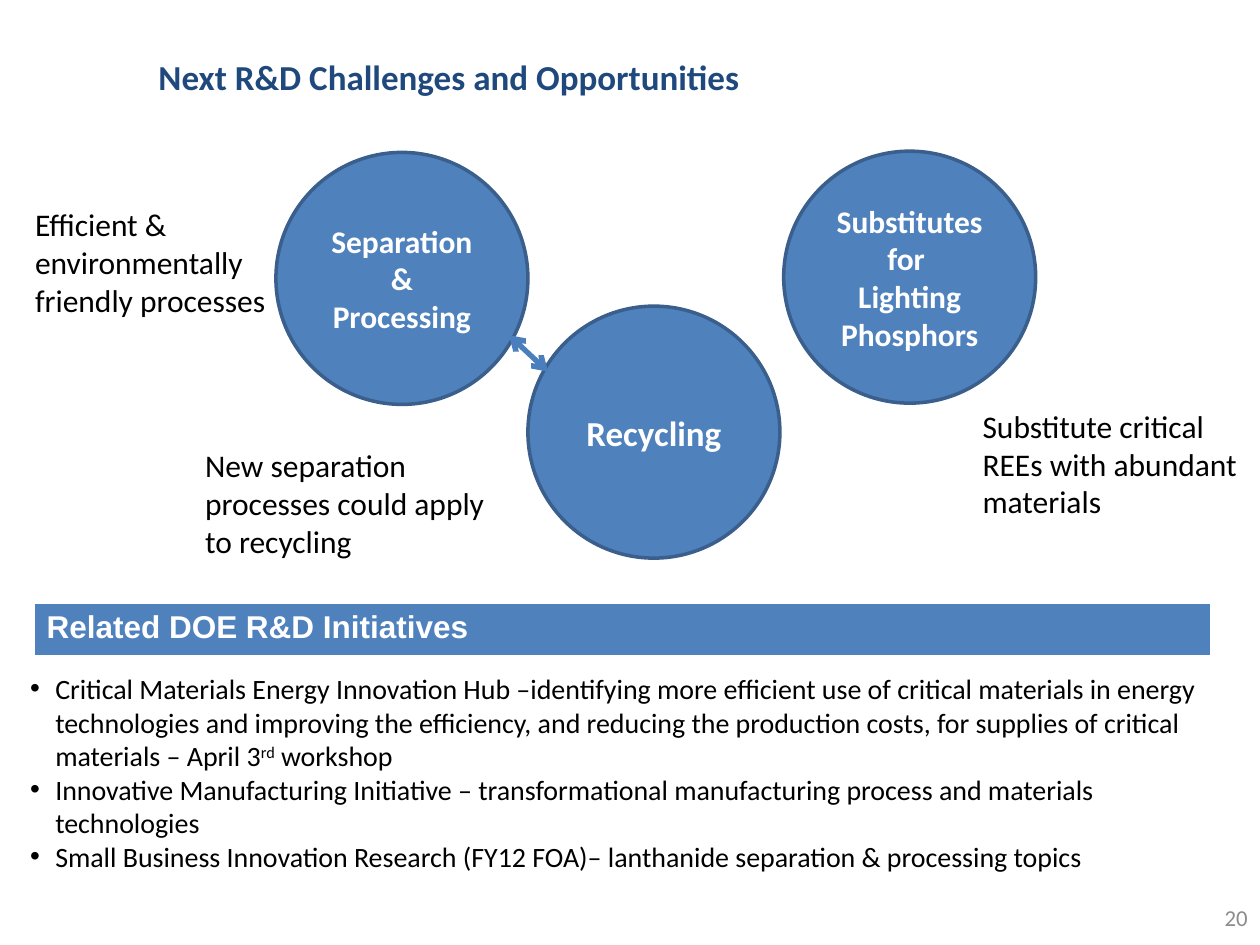
from lxml.etree import SubElement
from pptx import Presentation
from pptx.dml.color import RGBColor
from pptx.enum.shapes import MSO_CONNECTOR as Connector, MSO_SHAPE as Shape
from pptx.enum.text import MSO_ANCHOR as Anchor, PP_ALIGN as Align
from pptx.oxml.ns import qn
from pptx.util import Inches, Pt

COLORS = {
    "title": "1F497D",
    "circle": "4F81BD",
    "outline": "3A5F8C",
    "arrow": "4B7EBC",
    "text": "000000",
    "white": "FFFFFF",
    "number": "8C8C8C",
}
DIAMETER = 2
NOTE_HEIGHT = 1.01


def color(name):
    return RGBColor.from_string(COLORS[name])


def style(paragraph, size, ink, bold=False, align=Align.LEFT, face="Calibri"):
    paragraph.alignment = align
    font = paragraph.font
    font.name, font.size, font.bold = face, Pt(size), bold
    font.color.rgb = color(ink)


def add_text_frame(slide, box, anchor=Anchor.TOP):
    frame = slide.shapes.add_textbox(*map(Inches, box)).text_frame
    frame.word_wrap = True
    frame.vertical_anchor = anchor
    return frame


def add_label(slide, box, text, size, ink, anchor=Anchor.TOP, **options):
    paragraph = add_text_frame(slide, box, anchor).paragraphs[0]
    paragraph.text = text
    style(paragraph, size, ink, **options)


def add_topic(slide, left, top, lines, size):
    topic = slide.shapes.add_shape(
        Shape.OVAL, *map(Inches, (left, top, DIAMETER, DIAMETER)))
    topic.shadow.inherit = False
    topic.fill.solid()
    topic.fill.fore_color.rgb = color("circle")
    topic.line.color.rgb = color("outline")
    topic.line.width = Pt(2)
    frame = topic.text_frame
    frame.word_wrap = True
    frame.vertical_anchor = Anchor.MIDDLE
    frame.text = "\n".join(lines)
    for paragraph in frame.paragraphs:
        style(paragraph, size, "white", bold=True, align=Align.CENTER)


def add_double_arrow(slide, start, end):
    arrow = slide.shapes.add_connector(
        Connector.STRAIGHT, *map(Inches, (*start, *end)))
    arrow.line.color.rgb = color("arrow")
    arrow.line.width = Pt(3)
    line = arrow.line._get_or_add_ln()
    for tag in ("a:headEnd", "a:tailEnd"):
        SubElement(line, qn(tag), type="arrow")
    SubElement(arrow._element.spPr, qn("a:effectLst"))


def add_challenges(slide, left, top):
    add_topic(slide, left + 2.01, top + 0.01, ["Separation & Processing"], 18)
    add_topic(slide, left + 6.04, top, ["Substitutes for ", "Lighting Phosphors"], 18)
    add_topic(slide, left + 4.01, top + 1.23, ["Recycling"], 20)
    add_double_arrow(slide, (left + 3.86, top + 1.46), (left + 4.17, top + 1.75))
    notes = [
        (0, 0.38, 2.13, "Efficient & environmentally friendly processes"),
        (1.35, 2.29, 2.56, "New separation processes could apply to recycling"),
        (7.52, 1.98, 2.3, "Substitute critical REEs with abundant materials"),
    ]
    for dx, dy, width, text in notes:
        add_label(slide, (left + dx, top + dy, width, NOTE_HEIGHT), text, 18, "text")


def add_banner(slide, box, text):
    table = slide.shapes.add_table(1, 1, *map(Inches, box)).table
    cell = table.cell(0, 0)
    properties = cell._tc.get_or_add_tcPr()
    for side, width in (("L", 1), ("R", 1), ("T", 1), ("B", 3)):
        border = SubElement(properties, qn(f"a:ln{side}"), w=str(Pt(width)))
        fill = SubElement(border, qn("a:solidFill"))
        SubElement(fill, qn("a:srgbClr"), val=COLORS["white"])
    cell.fill.solid()
    cell.fill.fore_color.rgb = color("circle")
    cell.text = text
    style(cell.text_frame.paragraphs[0], 18, "white", bold=True, face="Arial")


def add_initiatives(slide, box, initiatives):
    frame = add_text_frame(slide, box)
    for index, parts in enumerate(initiatives):
        paragraph = frame.add_paragraph() if index else frame.paragraphs[0]
        properties = paragraph._p.get_or_add_pPr()
        properties.set("marL", str(Inches(0.2)))
        properties.set("indent", str(Inches(-0.2)))
        SubElement(properties, qn("a:buFont"), typeface="Arial")
        SubElement(properties, qn("a:buChar"), char="•")
        style(paragraph, 16, "text")
        for text, raised in parts:
            run = paragraph.add_run()
            run.text = text
            if raised:
                run._r.get_or_add_rPr().set("baseline", "30000")


def main():
    deck = Presentation()
    deck.slide_width, deck.slide_height = Inches(10), Inches(7.5)
    slide = deck.slides.add_slide(deck.slide_layouts[6])

    add_label(slide, (1.16, 0.22, 8.84, 0.78), "Next R&D Challenges and Opportunities",
              20, "title", Anchor.MIDDLE, bold=True)
    add_challenges(slide, 0.18, 1.2)
    add_banner(slide, (0.27, 4.79, 9.34, 0.43), "Related DOE R&D Initiatives")
    add_initiatives(slide, (0.14, 5.28, 9.65, 1.72), [
        [("Critical Materials Energy Innovation Hub –identifying more efficient use of "
          "critical materials in energy technologies and improving the efficiency, and "
          "reducing the production costs, for supplies of critical materials – April 3",
          False), ("rd", True), (" workshop", False)],
        [("Innovative Manufacturing Initiative – transformational manufacturing process "
          "and materials technologies", False)],
        [("Small Business Innovation Research (FY12 FOA)– lanthanide separation & "
          "processing topics", False)],
    ])
    add_label(slide, (7.67, 7.08, 2.33, 0.4), "20", 13, "number",
              Anchor.MIDDLE, align=Align.RIGHT)

    deck.save("out.pptx")


if __name__ == "__main__":
    main()
